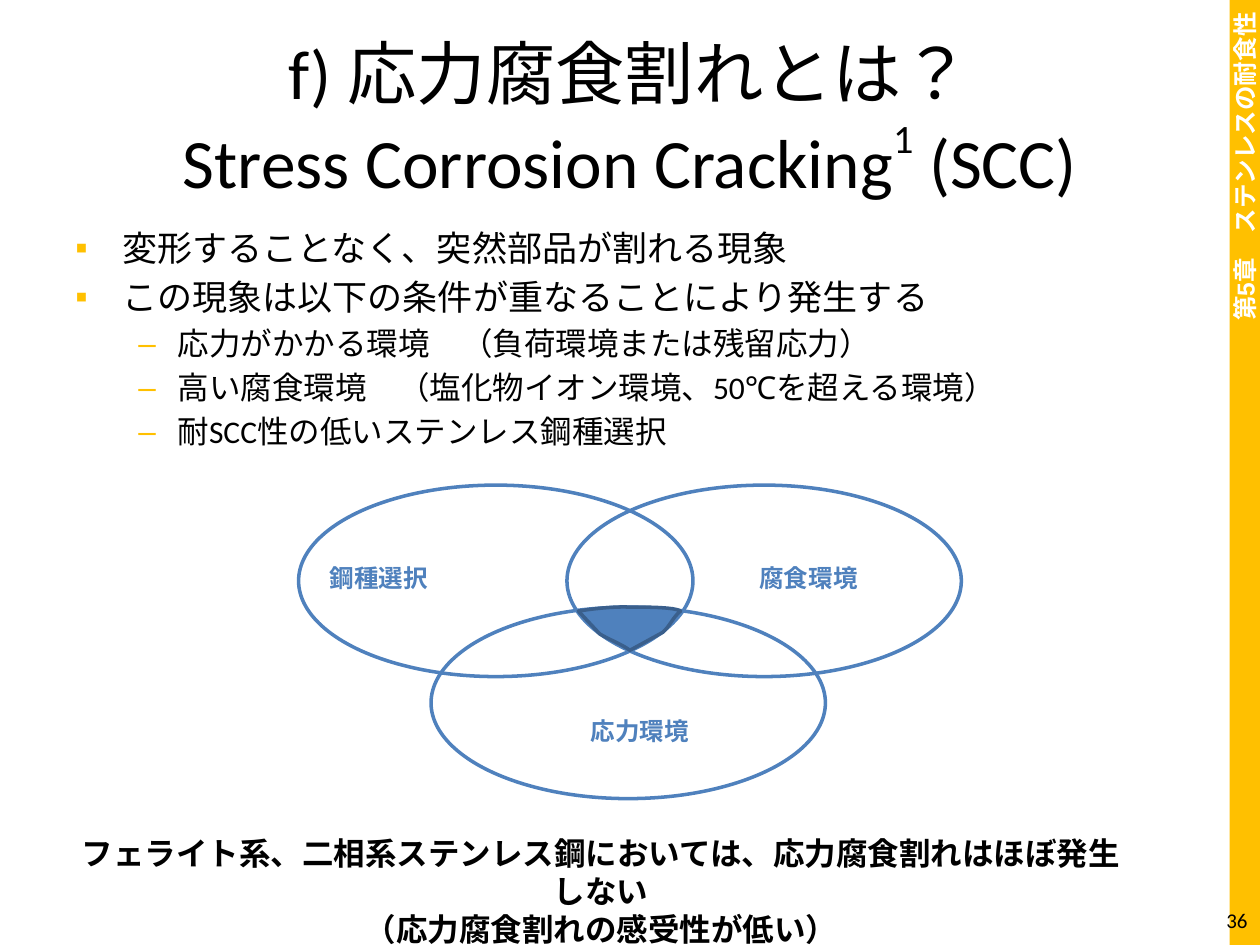
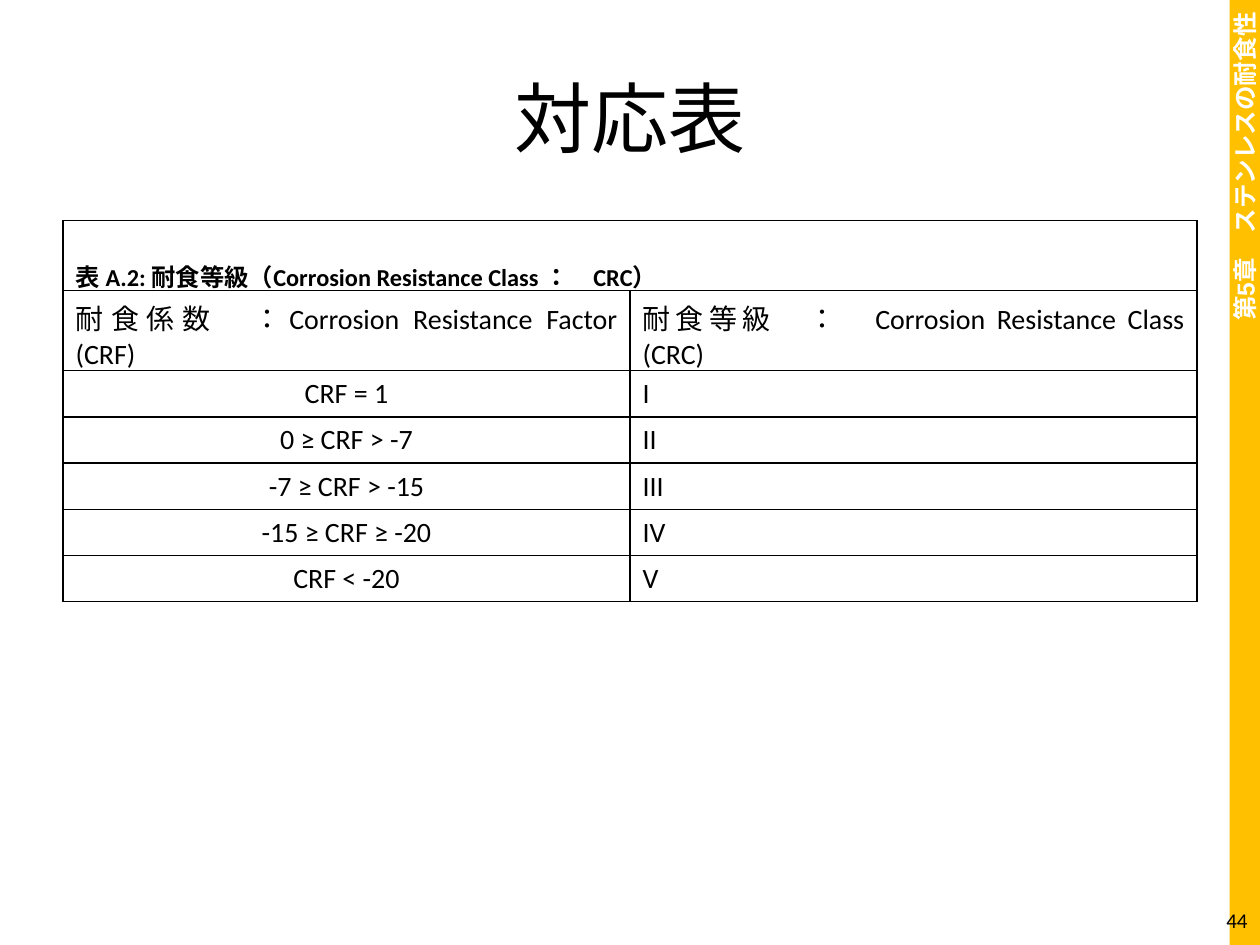
from dataclasses import dataclass

from lxml import etree
from pptx import Presentation
from pptx.dml.color import RGBColor as Rgb
from pptx.enum.lang import MSO_LANGUAGE_ID as Lang
from pptx.enum.shapes import MSO_SHAPE as Kind
from pptx.enum.text import MSO_ANCHOR as Anchor, PP_ALIGN as Align
from pptx.oxml.ns import qn
from pptx.util import Cm, Pt


@dataclass(frozen=True)
class Theme:
    font: str = "Calibri"
    side: str = "Arial"
    black: str = "000000"
    white: str = "FFFFFF"
    gold: str = "FFC000"
    blue: str = "4F81BD"
    navy: str = "3A5F8C"
    title: float = 44
    small: float = 39.6
    body: float = 20
    sub: float = 18
    cell: float = 16
    label: float = 14
    page: float = 12


look = Theme()


def write(frame, *lines, size=look.body, color=look.black, bold=False,
          font=look.font, align=Align.LEFT, anchor=Anchor.TOP):
    """Fill a frame; a line is a string or a list of (text, baseline percent)."""
    frame.word_wrap = True
    frame.vertical_anchor = anchor
    for i, line in enumerate(lines):
        para = frame.paragraphs[0] if i == 0 else frame.add_paragraph()
        para.alignment = align
        for text, base in [(line, 0)] if isinstance(line, str) else line:
            for j, part in enumerate(text.split("\n")):
                if j:
                    para.add_line_break()
                run = para.add_run()
                run.text = part
                run.font.name, run.font.size = font, Pt(size)
                run.font.bold = bold
                run.font.color.rgb = Rgb.from_string(color)
                run.font.language_id = Lang.JAPANESE
                if base:
                    run.font._element.set("baseline", str(base * 1000))


def box(slide, x, y, w, h):
    return slide.shapes.add_textbox(Cm(x), Cm(y), Cm(w), Cm(h)).text_frame


deck = Presentation()
deck.slide_width, deck.slide_height = Cm(25.4), Cm(19.05)

# Shared band, title and page number
heads = [
    ([("f) 応力腐食割れとは？\nStress Corrosion Cracking", 0), ("1", 50),
      (" (SCC)", 0)], look.small, "36"),
    ("対応表", look.title, "44"),
]
for head, size, num in heads:
    slide = deck.slides.add_slide(deck.slide_layouts[6])
    band = slide.shapes.add_shape(Kind.RECTANGLE, Cm(24.79), 0, Cm(0.61), Cm(19.05))
    band.shadow.inherit = False
    band.fill.solid()
    band.fill.fore_color.rgb = Rgb.from_string(look.gold)
    band.line.fill.background()
    write(band.text_frame, "第5章　ステンレスの耐食性", size=look.label, font=look.side,
          color=look.white, bold=True, align=Align.RIGHT, anchor=Anchor.MIDDLE)
    band.text_frame._txBody.bodyPr.set("vert", "vert270")
    write(box(slide, 1.27, 0.76, 22.86, 3.18), head, size=size,
          align=Align.CENTER, anchor=Anchor.MIDDLE)
    write(box(slide, 24.31, 18.03, 1.09, 1.02), num, size=look.page,
          align=Align.RIGHT, anchor=Anchor.MIDDLE)

crack, chart = deck.slides

# Stress corrosion cracking: bullets
points = [
    (0, "変形することなく、突然部品が割れる現象"),
    (0, "この現象は以下の条件が重なることにより発生する"),
    (1, "応力がかかる環境　（負荷環境または残留応力）"),
    (1, "高い腐食環境　（塩化物イオン環境、50℃を超える環境）"),
    (1, "耐SCC性の低いステンレス鋼種選択"),
]
levels = [("▪", look.body, 0.95, 0.95), ("–", look.sub, 2.06, 0.79)]
body = box(crack, 1.27, 4.45, 22.86, 13.79)
write(body, *[text for level, text in points])
for para, (level, text) in zip(body.paragraphs, points):
    mark, size, left, hang = levels[level]
    para.level = level
    para.space_before = Pt(size * 0.2)
    para.runs[0].font.size = Pt(size)
    props = para._p.get_or_add_pPr()
    props.set("marL", str(Cm(left)))
    props.set("indent", str(-Cm(hang)))
    tint = etree.SubElement(props, qn("a:buClr"))
    etree.SubElement(tint, qn("a:srgbClr"), val=look.gold)
    etree.SubElement(props, qn("a:buFont"), typeface=look.side)
    etree.SubElement(props, qn("a:buChar"), char=mark)

write(box(crack, 1.09, 16.69, 22.05, 1.8),
      "フェライト系、二相系ステンレス鋼においては、応力腐食割れはほぼ発生しない",
      "（応力腐食割れの感受性が低い）",
      size=look.sub, bold=True, align=Align.CENTER)

# Three overlapping conditions
for x, y in [(8.69, 12.24), (6.02, 9.78), (11.43, 9.78)]:
    ring = crack.shapes.add_shape(Kind.OVAL, Cm(x), Cm(y), Cm(7.95), Cm(3.86))
    ring.shadow.inherit = False
    ring.fill.background()
    ring.line.color.rgb = Rgb.from_string(look.blue)
    ring.line.width = Pt(2)
for text, x, y, w in [("腐食環境", 15.06, 11.23, 4.04),
                      ("応力環境", 11.66, 14.3, 3.12),
                      ("鋼種選択", 6.4, 11.23, 6.15)]:
    write(box(crack, x, y, w, 0.86), text, size=look.label, color=look.blue, bold=True)

# Common core: each curve is a start, two control points and an end
curves = [
    [(11.66, 12.32), (11.84, 12.29), (12.37, 12.22), (12.7, 12.24)],
    [(12.7, 12.24), (13.06, 12.24), (13.61, 12.24), (13.72, 12.32)],
    [(13.72, 12.32), (13.56, 12.45), (13.51, 12.62), (13.36, 12.75)],
    [(12.7, 13.11), (12.52, 12.98), (12.29, 12.9), (12.09, 12.78)],
]
steps = 8
edge = []
for curve in curves:
    for i in range(steps + 1):
        t = i / steps
        mix = [(1 - t) ** 3, 3 * t * (1 - t) ** 2, 3 * t * t * (1 - t), t ** 3]
        edge.append([Cm(sum(m * v for m, v in zip(mix, axis)))
                     for axis in zip(*curve)])
pen = crack.shapes.build_freeform(*edge[0])
pen.add_line_segments(edge[1:], close=True)
core = pen.convert_to_shape()
core.shadow.inherit = False
core.fill.solid()
core.fill.fore_color.rgb = Rgb.from_string(look.blue)
core.line.color.rgb = Rgb.from_string(look.navy)
core.line.width = Pt(2)

# Corrosion resistance classes
rows = [
    ("表 A.2: 耐食等級（Corrosion Resistance Class ：　CRC）", ""),
    ("耐食係数　：Corrosion Resistance Factor (CRF)",
     "耐食等級　：　Corrosion Resistance Class (CRC)"),
    ("CRF = 1", "I"),
    ("0 ≥ CRF > -7", "II"),
    ("-7 ≥ CRF > -15", "III"),
    ("-15 ≥ CRF ≥ -20", "IV"),
    ("CRF < -20", "V"),
]
grid = chart.shapes.add_table(len(rows), 2, Cm(1.27), Cm(4.45), Cm(22.86), Cm(6.26)).table
grid.first_row = grid.horz_banding = False
grid.cell(0, 0).merge(grid.cell(0, 1))
for r, row in enumerate(rows):
    grid.rows[r].height = Cm(0.84 if r else 1.22)
    for c, text in enumerate(row):
        cell = grid.cell(r, c)
        if r == 0 and c == 0:
            write(cell.text_frame, [(text, -25)], size=24, bold=True)
        elif r:
            write(cell.text_frame, text, size=look.cell,
                  align=Align.CENTER if r > 1 and c == 0 else Align.JUSTIFY)
            cell.vertical_anchor = Anchor.MIDDLE
        props = cell._tc.get_or_add_tcPr()
        for side in ("lnL", "lnR", "lnT", "lnB"):
            line = etree.SubElement(props, qn("a:" + side), w=str(Pt(1)))
            fill = etree.SubElement(line, qn("a:solidFill"))
            etree.SubElement(fill, qn("a:srgbClr"), val=look.black)
        cell.fill.background()

deck.save("out.pptx")
